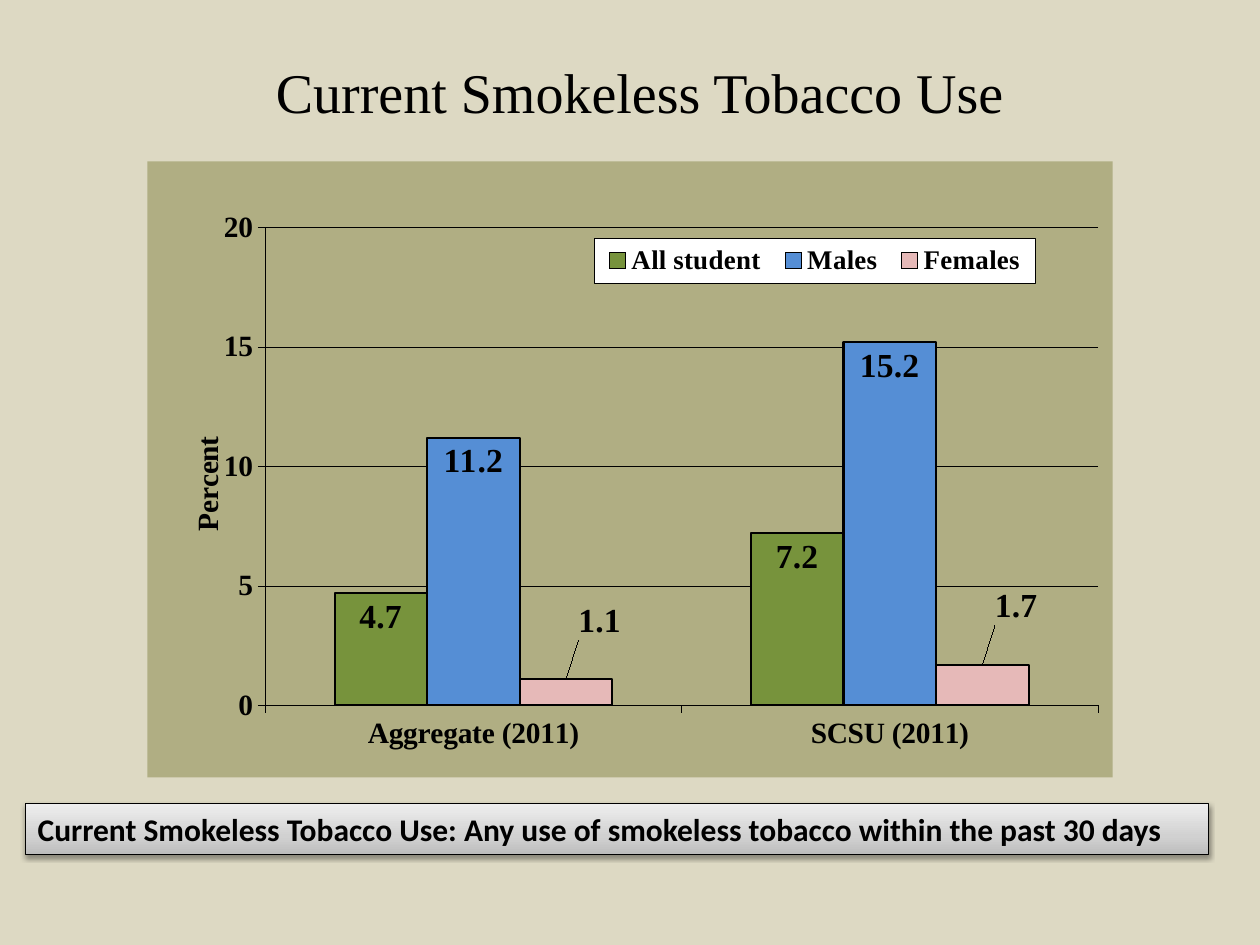
import copy
import pptx
import pptx.chart.data
import pptx.dml.color
import pptx.enum.chart
import pptx.enum.shapes
import pptx.enum.text
import pptx.oxml
import pptx.oxml.ns
import pptx.util
from pptx.util import Inches

TITLE = "Current Smokeless Tobacco Use"
NOTE = "Current Smokeless Tobacco Use: Any use of smokeless tobacco within the past 30 days"
CATEGORIES = ["Aggregate (2011)", "SCSU (2011)"]
SERIES = [
    ("All student", [4.7, 7.2], "77933C"),
    ("Males", [11.2, 15.2], "558ED5"),
    ("Females", [1.1, 1.7], "E6B9B8"),
]
NOTE_GRADIENT = [(0, "BDBDBD"), (0.35, "D1D1D1"), (1, "EEEEEE")]
SERIF = "Times New Roman"
C = "http://schemas.openxmlformats.org/drawingml/2006/chart"
A = "http://schemas.openxmlformats.org/drawingml/2006/main"


def color(value):
    return pptx.dml.color.RGBColor.from_string(value)


def style(font, size, name=SERIF, bold=True):
    font.size = pptx.util.Pt(size)
    font.name = name
    font.bold = bold
    font.color.rgb = color("000000")


def outline(line, width):
    line.color.rgb = color("000000")
    line.width = pptx.util.Pt(width)


def layout(target=None, edge=True, **places):
    parts = f'<c:layoutTarget val="{target}"/>' if target else ""
    if edge:
        parts += '<c:xMode val="edge"/><c:yMode val="edge"/>'
    parts += "".join(f'<c:{key} val="{value}"/>' for key, value in places.items())
    return pptx.oxml.parse_xml(
        f'<c:layout xmlns:c="{C}"><c:manualLayout>{parts}</c:manualLayout></c:layout>')


def place(parent, new_layout, after=None):
    for old in parent.findall(pptx.oxml.ns.qn("c:layout")):
        parent.remove(old)
    if after is None:
        parent.insert(0, new_layout)
    else:
        parent.find(pptx.oxml.ns.qn(after)).addnext(new_layout)


def add_title(page):
    box = page.shapes.add_textbox(Inches(0.58), Inches(0.17), Inches(9), Inches(1.11))
    frame = box.text_frame
    frame.word_wrap = True
    frame.vertical_anchor = pptx.enum.text.MSO_ANCHOR.MIDDLE
    frame.text = TITLE
    para = frame.paragraphs[0]
    para.alignment = pptx.enum.text.PP_ALIGN.CENTER
    style(para.runs[0].font, 32, bold=False)


def style_axes(chart):
    values = chart.value_axis
    values.minimum_scale, values.maximum_scale, values.major_unit = 0, 20, 5
    values.has_major_gridlines = True
    outline(values.major_gridlines.format.line, 0.3)
    for axis in (chart.category_axis, values):
        axis.major_tick_mark = pptx.enum.chart.XL_TICK_MARK.OUTSIDE
        style(axis.tick_labels.font, 16.8)
        outline(axis.format.line, 0.3)
    chart.category_axis.tick_label_position = pptx.enum.chart.XL_TICK_LABEL_POSITION.LOW
    frame = values.axis_title.text_frame
    frame.text = "Percent"
    style(frame.paragraphs[0].runs[0].font, 16.8)
    place(values.axis_title._element, layout(x=0.037, y=0.438), "c:tx")


def style_series(plot):
    positions = pptx.enum.chart.XL_LABEL_POSITION
    for series, (name, numbers, fill) in zip(plot.series, SERIES):
        series.format.fill.solid()
        series.format.fill.fore_color.rgb = color(fill)
        outline(series.format.line, 1.2)
        labels = series.data_labels
        labels.show_value = True
        labels.position = positions.INSIDE_END
        style(labels.font, 19.2)
        if name == "Females":
            for index in range(len(numbers)):
                label = series.points[index].data_label
                style(label.font, 19.2)
                label.position = positions.OUTSIDE_END
                place(labels._element.findall(pptx.oxml.ns.qn("c:dLbl"))[index],
                      layout(edge=False, x=0.035, y=-0.055), "c:idx")


def add_chart(page):
    data = pptx.chart.data.CategoryChartData()
    data.categories = CATEGORIES
    for name, numbers, fill in SERIES:
        data.add_series(name, numbers)
    chart = page.shapes.add_chart(
        pptx.enum.chart.XL_CHART_TYPE.COLUMN_CLUSTERED,
        Inches(1.17), Inches(1.28), Inches(7.66), Inches(4.89), data).chart
    chart.has_title = False
    style(chart.font, 21.6)
    plot = chart.plots[0]
    plot.gap_width, plot.overlap, plot.vary_by_categories = 150, 0, False
    style_axes(chart)
    style_series(plot)
    chart.has_legend = True
    legend = chart.legend
    legend.position = pptx.enum.chart.XL_LEGEND_POSITION.RIGHT
    legend.include_in_layout = False
    style(legend.font, 15.4)
    place(legend._element, layout(x=0.463, y=0.125, w=0.457, h=0.073), "c:legendPos")
    legend._element.find(pptx.oxml.ns.qn("c:txPr")).addprevious(area("FFFFFF", "000000"))
    place(chart._chartSpace.chart.plotArea,
          layout("inner", x=0.122, y=0.108, w=0.863, h=0.775))
    chart._chartSpace.find(pptx.oxml.ns.qn("c:txPr")).addprevious(area("B0AE83"))


def area(fill, line=None):
    def solid(value):
        return f'<a:solidFill><a:srgbClr val="{value}"/></a:solidFill>'
    stroke = solid(line) if line else "<a:noFill/>"
    return pptx.oxml.parse_xml(
        f'<c:spPr xmlns:c="{C}" xmlns:a="{A}">{solid(fill)}'
        f'<a:ln w="3810">{stroke}</a:ln></c:spPr>')


def add_note(page):
    box = page.shapes.add_shape(pptx.enum.shapes.MSO_SHAPE.RECTANGLE,
                                Inches(0.2), Inches(6.38), Inches(9.39), Inches(0.4))
    box.fill.gradient()
    box.fill.gradient_angle = 90
    stops = box.fill.gradient_stops
    stop_list = box._element.spPr.find(".//" + pptx.oxml.ns.qn("a:gsLst"))
    stop_list.append(copy.deepcopy(stop_list[0]))
    stops = box.fill.gradient_stops
    for stop, (position, value) in zip(stops, NOTE_GRADIENT):
        stop.position = position
        stop.color.rgb = color(value)
    outline(box.line, 0.75)
    box.shadow.inherit = False
    box._element.spPr.find(pptx.oxml.ns.qn("a:effectLst")).append(pptx.oxml.parse_xml(
        f'<a:outerShdw xmlns:a="{A}" blurRad="39370" dist="20320" dir="5400000" '
        'rotWithShape="0"><a:srgbClr val="000000"><a:alpha val="38000"/>'
        '</a:srgbClr></a:outerShdw>'))
    frame = box.text_frame
    frame.word_wrap = True
    frame.auto_size = pptx.enum.text.MSO_AUTO_SIZE.SHAPE_TO_FIT_TEXT
    frame.vertical_anchor = pptx.enum.text.MSO_ANCHOR.TOP
    frame.text = NOTE
    para = frame.paragraphs[0]
    para.alignment = pptx.enum.text.PP_ALIGN.LEFT
    style(para.runs[0].font, 18, "Calibri")


def main():
    deck = pptx.Presentation()
    deck.slide_width, deck.slide_height = Inches(10), Inches(7.5)
    page = deck.slides.add_slide(deck.slide_layouts[6])
    page.background.fill.solid()
    page.background.fill.fore_color.rgb = color("DDD9C3")
    add_title(page)
    add_chart(page)
    add_note(page)
    deck.save("out.pptx")


if __name__ == "__main__":
    main()
